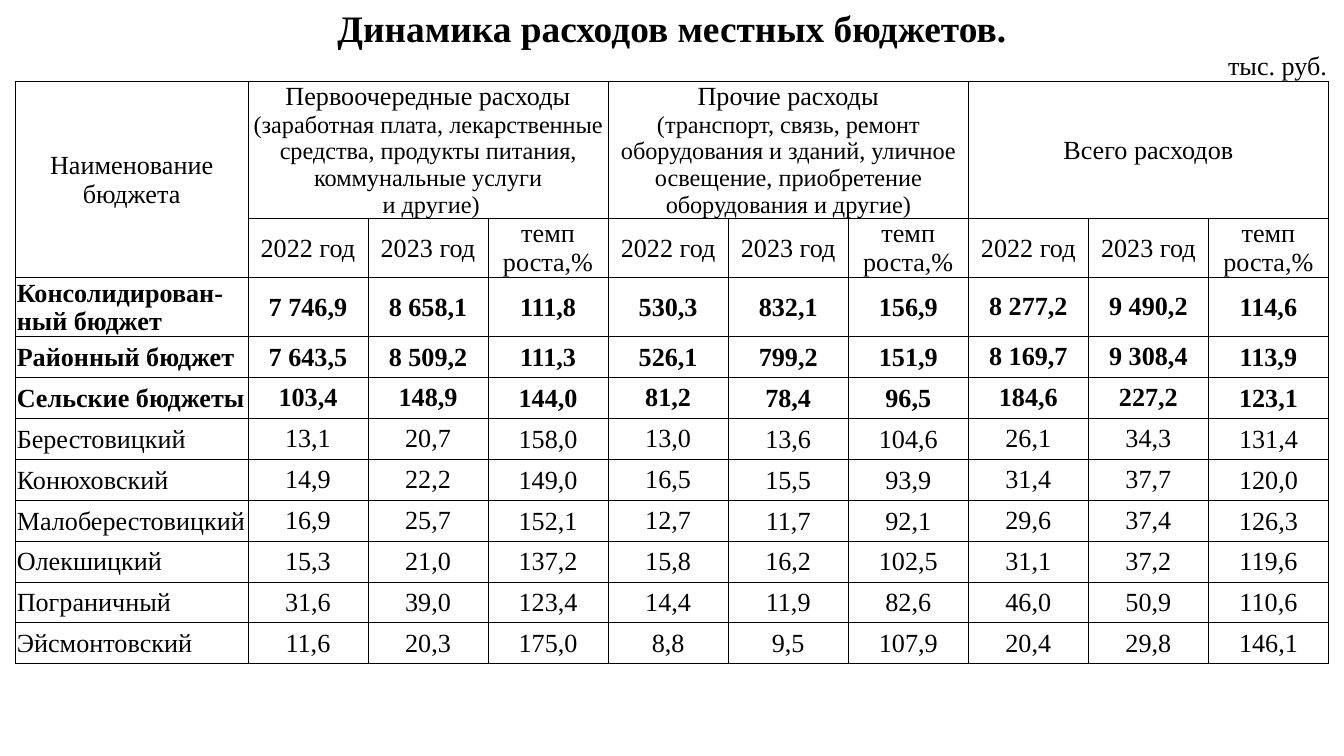
import pptx
import pptx.dml.color
import pptx.enum.text
import pptx.util
from lxml import etree
from pptx.oxml.ns import qn

Inches = pptx.util.Inches
Pt = pptx.util.Pt
ALIGN = pptx.enum.text.PP_ALIGN
ANCHOR = pptx.enum.text.MSO_ANCHOR

FONT = "Times New Roman"
BLACK = "000000"
SLIDE_WIDTH = 10
TABLE_WIDTH = 9.77
NAME_WIDTH = 1.73
COL_WIDTHS = [NAME_WIDTH] + [(TABLE_WIDTH - NAME_WIDTH) / 9] * 9
ROW_HEIGHTS = [0.32, 0.07, 0.47, 0.37] + [2.74 / 9] * 9
TITLE_ROW, UNIT_ROW, GROUP_ROW, YEAR_ROW, DATA_ROW = range(5)
BOLD_ROWS = 3

# Each group heading is a list of paragraphs, each a list of (text, size)
GROUPS = [
    [[("Первоочередные расходы ", 14),
      ("(заработная плата, лекарственные средства, продукты питания, "
       "коммунальные услуги", 13)],
     [(" и другие)", 13)]],
    [[("Прочие расходы", 14)],
     [("(транспорт, связь, ремонт оборудования и зданий, уличное освещение, "
       "приобретение оборудования и другие)", 13)]],
    [[("Всего расходов", 14)]],
]
YEAR_HEADS = [["2022 год"], ["2023 год"], ["темп", "роста,%"]]

BUDGETS = [
    ("Консолидирован-ный бюджет", "7 746,9", "8 658,1", "111,8", "530,3", "832,1",
     "156,9", "8 277,2", "9 490,2", "114,6"),
    ("Районный бюджет", "7 643,5", "8 509,2", "111,3", "526,1", "799,2",
     "151,9", "8 169,7", "9 308,4", "113,9"),
    ("Сельские бюджеты", "103,4", "148,9", "144,0", "81,2", "78,4",
     "96,5", "184,6", "227,2", "123,1"),
    ("Берестовицкий", "13,1", "20,7", "158,0", "13,0", "13,6",
     "104,6", "26,1", "34,3", "131,4"),
    ("Конюховский", "14,9", "22,2", "149,0", "16,5", "15,5",
     "93,9", "31,4", "37,7", "120,0"),
    ("Малоберестовицкий", "16,9", "25,7", "152,1", "12,7", "11,7",
     "92,1", "29,6", "37,4", "126,3"),
    ("Олекшицкий", "15,3", "21,0", "137,2", "15,8", "16,2",
     "102,5", "31,1", "37,2", "119,6"),
    ("Пограничный", "31,6", "39,0", "123,4", "14,4", "11,9",
     "82,6", "46,0", "50,9", "110,6"),
    ("Эйсмонтовский", "11,6", "20,3", "175,0", "8,8", "9,5",
     "107,9", "20,4", "29,8", "146,1"),
]


def color(value):
    return pptx.dml.color.RGBColor.from_string(value)


def add_run(p, text, size=14, bold=False, fill=BLACK):
    r = p.add_run()
    r.text = text
    r.font.name = FONT
    r.font.size = Pt(size)
    r.font.bold = bold
    r.font.color.rgb = color(fill)


def write(cell, paragraphs, align=ALIGN.CENTER, anchor=ANCHOR.MIDDLE, **fmt):
    """Write paragraphs, each a string or a list of (text, size) runs."""
    cell.vertical_anchor = anchor
    tf = cell.text_frame
    for i, runs in enumerate(paragraphs):
        p = tf.add_paragraph() if i else tf.paragraphs[0]
        p.alignment = align
        if isinstance(runs, str):
            add_run(p, runs, **fmt)
        else:
            for text, size in runs:
                add_run(p, text, size=size, **fmt)


def set_borders(cell, sides):
    tc_pr = cell._tc.get_or_add_tcPr()
    for i, side in enumerate("LRTB"):
        ln = etree.Element(qn("a:ln" + side), w=str(Pt(0.5)))
        if side in sides:
            fill = etree.SubElement(ln, qn("a:solidFill"))
            etree.SubElement(fill, qn("a:srgbClr"), val=BLACK)
        else:
            etree.SubElement(ln, qn("a:noFill"))
        tc_pr.insert(i, ln)


def format_cell(cell, sides):
    cell.margin_left = cell.margin_right = cell.margin_top = Inches(0.01)
    cell.margin_bottom = 0
    cell.fill.background()
    set_borders(cell, sides)
    # A small end mark lets blank cells stay low
    etree.SubElement(cell.text_frame.paragraphs[0]._p, qn("a:endParaRPr"), sz="100")


def add_grid(s):
    left = (SLIDE_WIDTH - TABLE_WIDTH) / 2
    frame = s.shapes.add_table(len(ROW_HEIGHTS), len(COL_WIDTHS), Inches(left),
                               Inches(0.06), Inches(TABLE_WIDTH), Inches(5.09))
    table = frame.table
    table.first_row = table.horz_banding = False
    for col, width in zip(table.columns, COL_WIDTHS):
        col.width = Inches(width)
    for row, height in zip(table.rows, ROW_HEIGHTS):
        row.height = Inches(height)
    for i, row in enumerate(table.rows):
        sides = {TITLE_ROW: "", UNIT_ROW: "B"}.get(i, "LRTB")
        for cell in row.cells:
            format_cell(cell, sides)
    # Row changes reset the frame height
    frame.height = Inches(5.09)
    return table


def fill_header(table):
    # Title and unit of measure
    title = table.cell(TITLE_ROW, 0)
    title.merge(table.cell(TITLE_ROW, 9))
    write(title, ["Динамика расходов местных бюджетов."],
          anchor=ANCHOR.BOTTOM, size=20, bold=True)
    for c in (1, 3, 5):
        table.cell(UNIT_ROW, c).merge(table.cell(UNIT_ROW, c + 1))
    write(table.cell(UNIT_ROW, 9), ["тыс. руб."], align=ALIGN.RIGHT,
          anchor=ANCHOR.BOTTOM)

    # Column headings
    name = table.cell(GROUP_ROW, 0)
    name.merge(table.cell(YEAR_ROW, 0))
    write(name, ["Наименование бюджета"])
    for g, heading in enumerate(GROUPS):
        first = 1 + 3 * g
        group = table.cell(GROUP_ROW, first)
        group.merge(table.cell(GROUP_ROW, first + 2))
        write(group, heading)
        for i, head in enumerate(YEAR_HEADS):
            write(table.cell(YEAR_ROW, first + i), head)


def fill_budgets(table):
    for i, budget in enumerate(BUDGETS):
        raised = (7, 8) if i < 2 else (1, 2, 4, 7, 8)
        for c, text in enumerate(budget):
            cell = table.cell(DATA_ROW + i, c)
            write(cell, [text], align=ALIGN.CENTER if c else ALIGN.LEFT,
                  bold=i < BOLD_ROWS)
            if c in raised:
                cell.margin_bottom = Inches(0.01)


def main():
    prs = pptx.Presentation()
    prs.slide_width = Inches(SLIDE_WIDTH)
    prs.slide_height = Inches(SLIDE_WIDTH * 9 / 16)
    s = prs.slides.add_slide(prs.slide_layouts[6])
    table = add_grid(s)
    fill_header(table)
    fill_budgets(table)
    prs.save("out.pptx")


if __name__ == "__main__":
    main()
